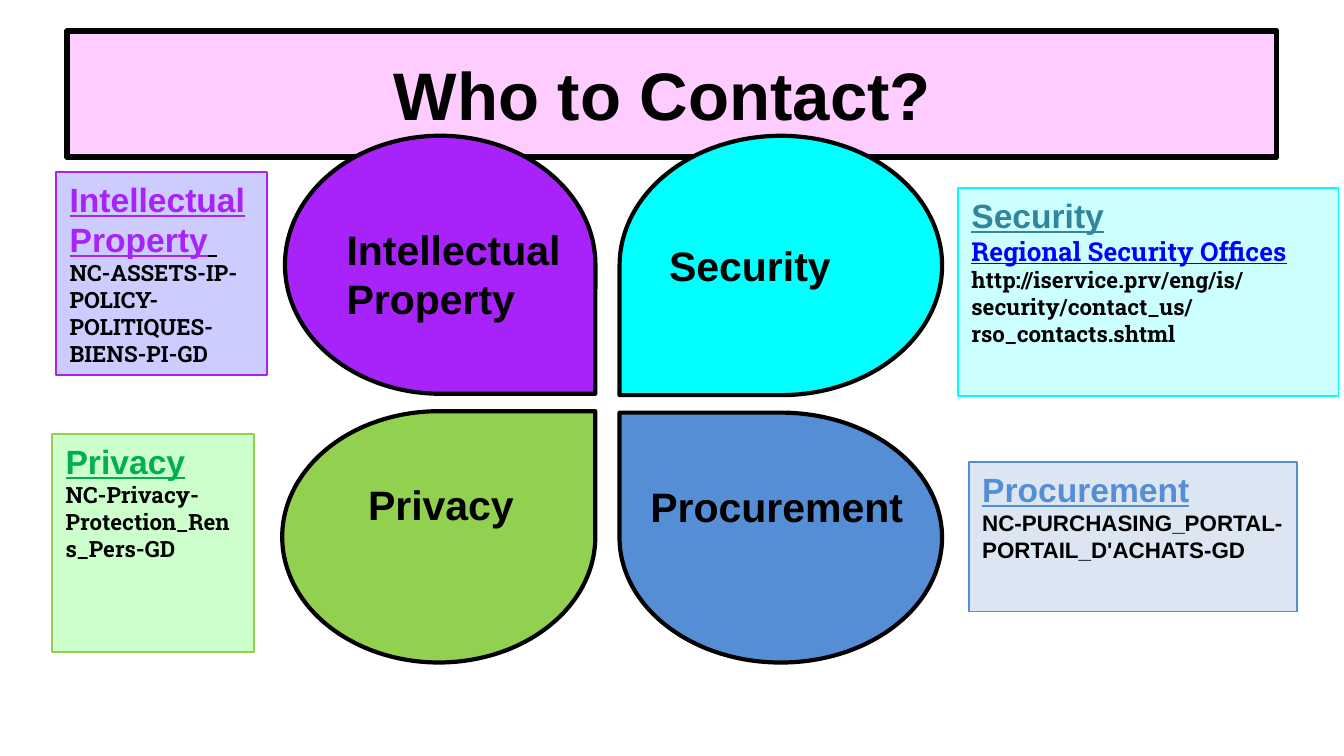
from pptx import Presentation
from pptx.dml.color import RGBColor
from pptx.enum.shapes import MSO_SHAPE
from pptx.enum.text import MSO_ANCHOR, PP_ALIGN
from pptx.util import Inches, Pt

SLAB = "Roboto Slab"
TITLE = "Who to Contact? "

# name, fill, petal box, rotation that turns the tip to the centre, label box
PETALS = [
    ("Intellectual Property", "A822FA", (2.12, 1.01, 2.31, 1.92), 90, (2.48, 1.62, 1.85, 0.84)),
    ("Security", "00FFFF", (4.61, 1.01, 2.4, 1.93), 180, (4.88, 1.74, 2.03, 0.47)),
    ("Privacy", "92D050", (2.1, 3.06, 2.33, 1.87), 0, (2.64, 3.52, 1.5, 0.47)),
    ("Procurement", "558ED5", (4.61, 3.07, 2.4, 1.86), 270, (4.74, 3.53, 2.17, 0.47)),
]

# box, fill, line, heading, heading colour, lines of (text, format)
CONTACTS = [
    ((0.42, 1.28, 1.57, 1.51), "CCCCFF", "A822FA", "Intellectual Property", "A822FA",
     [("NC-ASSETS-IP-POLICY-POLITIQUES-BIENS-PI-GD", dict(font=SLAB))]),
    ((0.39, 3.23, 1.5, 1.62), "CCFFCC", "92D050", "Privacy", "00B050",
     [("NC-Privacy-Protection_Rens_Pers-GD", dict(font=SLAB))]),
    ((7.13, 1.4, 2.83, 1.55), "CCFFFF", "00FFFF", "Security", "31859C",
     [("Regional Security Offices", dict(font=SLAB, size=14, color="0000FF", underline=True)),
      ("http://iservice.prv/eng/is/security/contact_us/rso_contacts.shtml", dict(font=SLAB))]),
    ((7.21, 3.44, 2.44, 1.11), "DCE6F2", "558ED5", "Procurement", "558ED5",
     [("NC-PURCHASING_PORTAL-PORTAIL_D'ACHATS-GD", {})]),
]


def rgb(value):
    return RGBColor.from_string(value)


def add_shape(kind, box, fill, line, width):
    sp = s.shapes.add_shape(kind, *map(Inches, box))
    sp.shadow.inherit = False
    sp.fill.solid()
    sp.fill.fore_color.rgb = rgb(fill)
    sp.line.color.rgb = rgb(line)
    sp.line.width = Pt(width)
    return sp


def add_run(p, text, size=12, font="Arial", color="000000", bold=True, underline=False,
            align=PP_ALIGN.LEFT):
    p.alignment = align
    r = p.add_run()
    r.text = text
    r.font.size = Pt(size)
    r.font.name = font
    r.font.bold = bold
    r.font.underline = underline
    r.font.color.rgb = rgb(color)


prs = Presentation()
prs.slide_width = Inches(10)
prs.slide_height = prs.slide_width * 9 // 16
s = prs.slides.add_slide(prs.slide_layouts[6])

banner = add_shape(MSO_SHAPE.RECTANGLE, (0.5, 0.23, 9, 0.94), "FFCCFF", "000000", 3)
banner.text_frame.vertical_anchor = MSO_ANCHOR.MIDDLE
add_run(banner.text_frame.paragraphs[0], TITLE, size=36, align=PP_ALIGN.CENTER)

for name, fill, (x, y, w, h), turn, label in PETALS:
    if turn % 180:  # a quarter turn swaps width and height about the centre
        x, y, w, h = x + (w - h) / 2, y + (h - w) / 2, h, w
    add_shape(MSO_SHAPE.TEAR, (x, y, w, h), fill, "000000", 2.25).rotation = turn

for name, fill, box, turn, label in PETALS:
    tf = s.shapes.add_textbox(*map(Inches, label)).text_frame
    tf.word_wrap = True
    add_run(tf.paragraphs[0], name, size=22)

for box, fill, line, heading, color, details in CONTACTS:
    tf = add_shape(MSO_SHAPE.RECTANGLE, box, fill, line, 1).text_frame
    tf.word_wrap = True
    tf.vertical_anchor = MSO_ANCHOR.TOP
    p = tf.paragraphs[0]
    add_run(p, heading, size=18, color=color, underline=True)
    if heading == "Intellectual Property":
        add_run(p, " ", size=18, bold=False, underline=True)
    for text, style in details:
        add_run(tf.add_paragraph(), text, **style)

prs.save("out.pptx")
